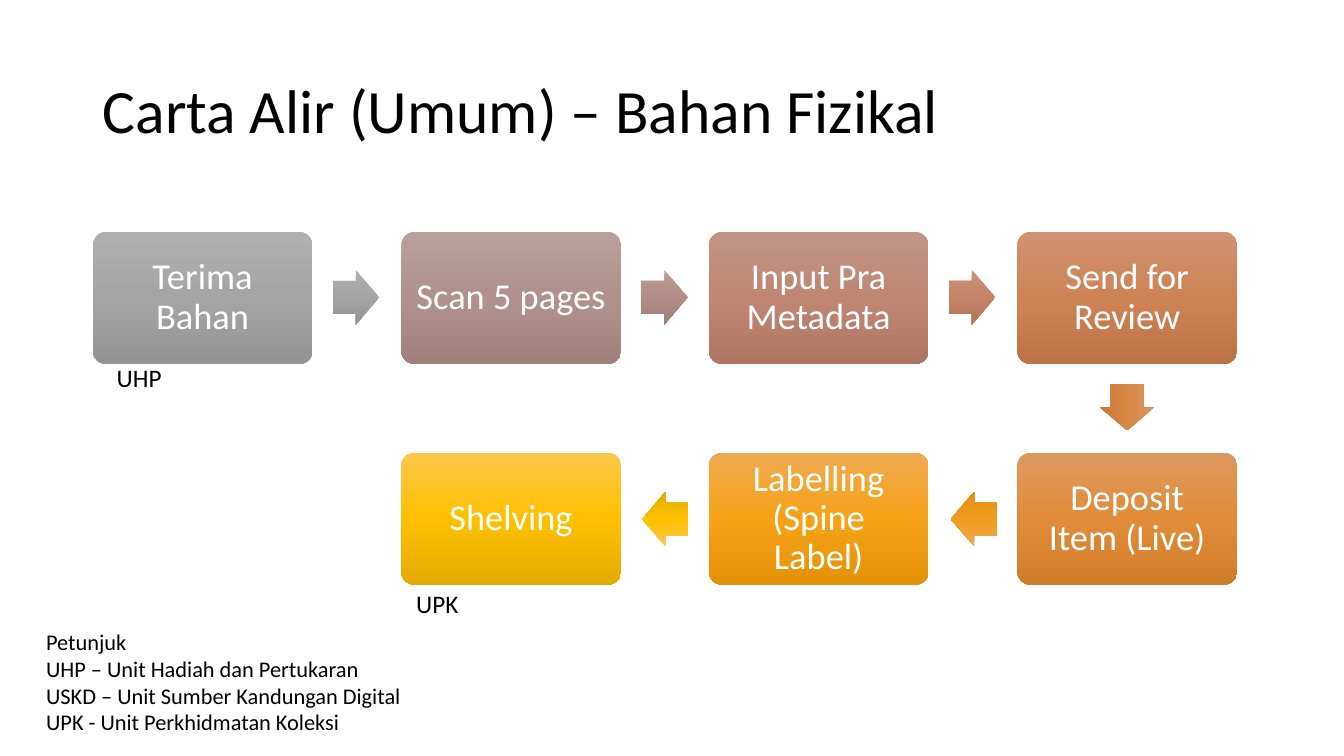
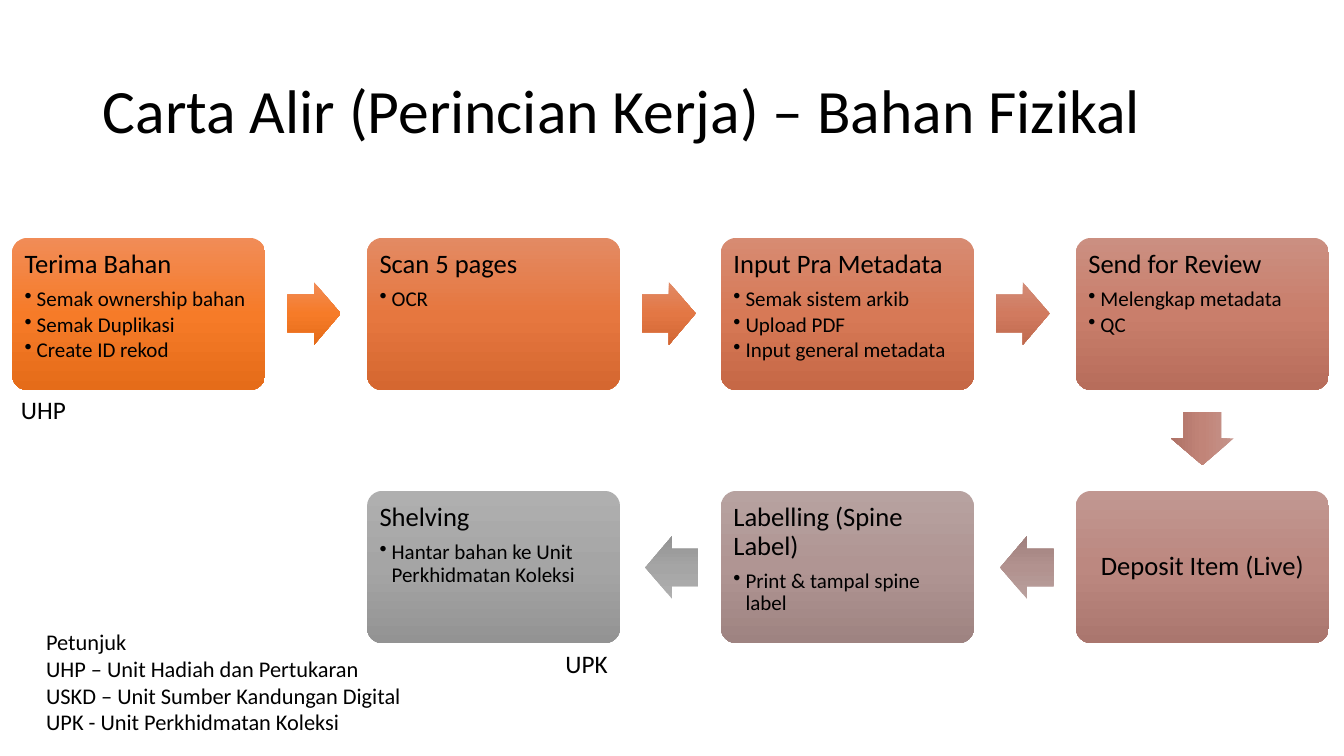
from copy import deepcopy
from dataclasses import dataclass
from typing import NamedTuple

from lxml import etree
from pptx import Presentation
from pptx.dml.color import RGBColor
from pptx.enum.shapes import MSO_SHAPE as Shape
from pptx.enum.text import MSO_ANCHOR as Anchor
from pptx.enum.text import MSO_AUTO_SIZE as AutoSize
from pptx.enum.text import PP_ALIGN as Align
from pptx.oxml.ns import qn
from pptx.util import Emu, Pt

EMU_PER_PX = 9144
FONT = "Calibri"
BLACK = RGBColor(0x00, 0x00, 0x00)
WHITE = RGBColor(0xFF, 0xFF, 0xFF)

Shades = tuple[RGBColor, ...]


def shades(*codes: str) -> Shades:
    return tuple(RGBColor.from_string(code) for code in codes)


GREY = shades("AFAFAF", "A5A5A5", "939393")
GOLD = shades("FFC74B", "FFC000", "E3AB00")
ORANGE = shades("F18C57", "F67B28", "E56C19")

GREY_TO_GOLD_BOXES = (
    GREY,
    shades("B89F9B", "B0918D", "9F807C"),
    shades("C29487", "BE8673", "AD7562"),
    shades("CF9272", "CE8356", "BD7347"),
    shades("DE985E", "E08C38", "D07D29"),
    shades("EFAA50", "F5A217", "E59209"),
    GOLD,
)
GREY_TO_GOLD_ARROWS = (
    GREY,
    shades("BA9C97", "B38E88", "A17D77"),
    shades("C7927E", "C48468", "B37357"),
    shades("D89566", "D98744", "C87735"),
    shades("ECA752", "F19C1D", "E18D0F"),
    GOLD,
)
ORANGE_TO_GREY_BOXES = (
    ORANGE,
    shades("E38A63", "E6773F", "D56730"),
    shades("D78B72", "D77956", "C66846"),
    shades("CB8F81", "C97E6B", "B76D5B"),
    shades("C19791", "BC8880", "AA766E"),
    shades("B7A2A0", "B09593", "9E8381"),
    GREY,
)
ORANGE_TO_GREY_ARROWS = (
    ORANGE,
    shades("E18A66", "E37744", "D26734"),
    shades("D28C78", "D17A5F", "C06A4E"),
    shades("C5948B", "C18478", "AF7267"),
    shades("B9A09D", "B2928F", "A0807D"),
    GREY,
)

STEPS = (
    "Terima Bahan",
    "Scan 5 pages",
    "Input Pra Metadata",
    "Send for Review",
    "Deposit Item (Live)",
    "Labelling (Spine Label)",
    "Shelving",
)
DETAILS = (
    ("Semak ownership bahan", "Semak Duplikasi", "Create ID rekod"),
    ("OCR",),
    ("Semak sistem arkib", "Upload PDF", "Input general metadata"),
    ("Melengkap metadata", "QC"),
    (),
    ("Print & tampal spine label",),
    ("Hantar bahan ke Unit Perkhidmatan Koleksi",),
)
CELLS = ((0, 0), (1, 0), (2, 0), (3, 0), (3, 1), (2, 1), (1, 1))
TURNS = {(1, 0): 0, (0, 1): 90, (-1, 0): 180}
LEGEND = (
    "Petunjuk",
    "UHP – Unit Hadiah dan Pertukaran",
    "USKD – Unit Sumber Kandungan Digital",
    "UPK - Unit Perkhidmatan Koleksi",
)


class Area(NamedTuple):
    left: int
    top: int
    width: int
    height: int

    def emu(self) -> list[Emu]:
        return [px(value) for value in self]


TITLE_AREA = Area(92, 40, 1150, 145)
LEGEND_AREA = Area(36, 618, 376, 121)


@dataclass(frozen=True)
class Label:
    text: str
    area: Area


@dataclass(frozen=True)
class Flow:
    title: str
    first: Area
    last_left: int
    row_pitch: int
    arrow_length: int
    arrow_width: int
    arrow_gap: int
    inset: int
    size: int
    color: RGBColor
    boxes: tuple[Shades, ...]
    arrows: tuple[Shades, ...]
    details: tuple[tuple[str, ...], ...]
    labels: tuple[Label, ...]

    def box_area(self, column: int, row: int) -> Area:
        left, top, width, height = self.first
        pitch = (self.last_left - left) / 3
        return Area(round(left + pitch * column), top + self.row_pitch * row, width, height)

    def arrow_area(self, box: Area, across: int, down: int) -> Area:
        reach = self.arrow_gap + self.arrow_length / 2
        middle_x = box.left + box.width / 2 + across * (box.width / 2 + reach)
        middle_y = box.top + box.height / 2 + down * (box.height / 2 + reach)
        return Area(
            round(middle_x - self.arrow_length / 2),
            round(middle_y - self.arrow_width / 2),
            self.arrow_length,
            self.arrow_width,
        )


FLOWS = (
    Flow(
        title="Carta Alir (Umum) – Bahan Fizikal",
        first=Area(92, 230, 218, 131),
        last_left=1009,
        row_pitch=219,
        arrow_length=46,
        arrow_width=54,
        arrow_gap=20,
        inset=11,
        size=26,
        color=WHITE,
        boxes=GREY_TO_GOLD_BOXES,
        arrows=GREY_TO_GOLD_ARROWS,
        details=((),) * len(STEPS),
        labels=(Label("UHP", Area(106, 355, 86, 40)), Label("UPK", Area(403, 579, 63, 40))),
    ),
    Flow(
        title="Carta Alir (Perincian Kerja) – Bahan Fizikal",
        first=Area(12, 236, 251, 151),
        last_left=1067,
        row_pitch=251,
        arrow_length=53,
        arrow_width=62,
        arrow_gap=22,
        inset=8,
        size=19,
        color=BLACK,
        boxes=ORANGE_TO_GREY_BOXES,
        arrows=ORANGE_TO_GREY_ARROWS,
        details=DETAILS,
        labels=(Label("UHP", Area(11, 386, 86, 40)), Label("UPK", Area(551, 638, 63, 40))),
    ),
)


def px(value: int) -> Emu:
    return Emu(value * EMU_PER_PX)


def apply(target, values: dict) -> None:
    for name, value in values.items():
        setattr(target, name, value)


def write(para, text: str, size: int, color: RGBColor) -> None:
    span = para.add_run()
    span.text = text
    apply(span.font, {"name": FONT, "size": Pt(size)})
    span.font.color.rgb = color


def add_bullet(para) -> None:
    properties = para._p.get_or_add_pPr()
    properties.set("marL", str(px(12)))
    properties.set("indent", str(px(-12)))
    etree.SubElement(properties, qn("a:buChar")).set("char", "•")


def add_gradient_shape(page, kind, area: Area, adjustments: tuple, colors: Shades):
    shape = page.shapes.add_shape(kind, *area.emu())
    shape.shadow.inherit = False
    shape.line.fill.background()
    for index, value in enumerate(adjustments):
        shape.adjustments[index] = value
    fill = shape.fill
    fill.gradient()
    fill.gradient_angle = 270
    stops = shape._element.spPr.find(".//" + qn("a:gsLst"))
    stops.append(deepcopy(stops[-1]))
    for stop, position, color in zip(fill.gradient_stops, (0, 0.5, 1), colors):
        stop.position = position
        stop.color.rgb = color
    return shape


def add_step(page, flow: Flow, index: int) -> None:
    area = flow.box_area(*CELLS[index])
    box = add_gradient_shape(page, Shape.ROUNDED_RECTANGLE, area, (0.1,), flow.boxes[index])
    details = flow.details[index]
    frame = box.text_frame
    sides = ("margin_left", "margin_top", "margin_right", "margin_bottom")
    apply(frame, dict.fromkeys(sides, px(flow.inset)))
    apply(frame, {"word_wrap": True, "vertical_anchor": Anchor.TOP if details else Anchor.MIDDLE})
    heading = frame.paragraphs[0]
    apply(heading, {"alignment": Align.LEFT if details else Align.CENTER, "line_spacing": 0.9})
    write(heading, STEPS[index], flow.size, flow.color)
    if details:
        heading.space_after = Pt(6.5)
    for detail in details:
        para = frame.add_paragraph()
        add_bullet(para)
        apply(para, {"alignment": Align.LEFT, "line_spacing": 0.9, "space_after": Pt(2.25)})
        write(para, detail, 15, flow.color)


def add_arrow(page, flow: Flow, index: int) -> None:
    column, row = CELLS[index]
    next_column, next_row = CELLS[index + 1]
    direction = (next_column - column, next_row - row)
    area = flow.arrow_area(flow.box_area(column, row), *direction)
    arrow = add_gradient_shape(page, Shape.RIGHT_ARROW, area, (0.6, 0.5), flow.arrows[index])
    arrow.rotation = TURNS[direction]


def add_text(page, area: Area, lines: tuple[str, ...], size: int, wrap: bool) -> None:
    frame = page.shapes.add_textbox(*area.emu()).text_frame
    apply(frame, {"word_wrap": wrap, "auto_size": AutoSize.SHAPE_TO_FIT_TEXT})
    for index, line in enumerate(lines):
        para = frame.add_paragraph() if index else frame.paragraphs[0]
        write(para, line, size, BLACK)


def add_title(page, text: str) -> None:
    title = page.shapes.title
    apply(title, dict(zip(("left", "top", "width", "height"), TITLE_AREA.emu())))
    frame = title.text_frame
    apply(frame, {"word_wrap": True, "auto_size": AutoSize.NONE, "vertical_anchor": Anchor.MIDDLE})
    para = frame.paragraphs[0]
    apply(para, {"alignment": Align.LEFT, "line_spacing": 0.9})
    write(para, text, 44, BLACK)


def add_flow_page(deck, flow: Flow) -> None:
    page = deck.slides.add_slide(deck.slide_layouts[5])
    add_title(page, flow.title)
    for index in range(len(STEPS)):
        add_step(page, flow, index)
        if index < len(flow.arrows):
            add_arrow(page, flow, index)
    add_text(page, LEGEND_AREA, LEGEND, 16, False)
    for label in flow.labels:
        add_text(page, label.area, (label.text,), 18, True)


def main() -> None:
    deck = Presentation()
    apply(deck, {"slide_width": px(1333), "slide_height": px(750)})
    for flow in FLOWS:
        add_flow_page(deck, flow)
    deck.save("out.pptx")


if __name__ == "__main__":
    main()
